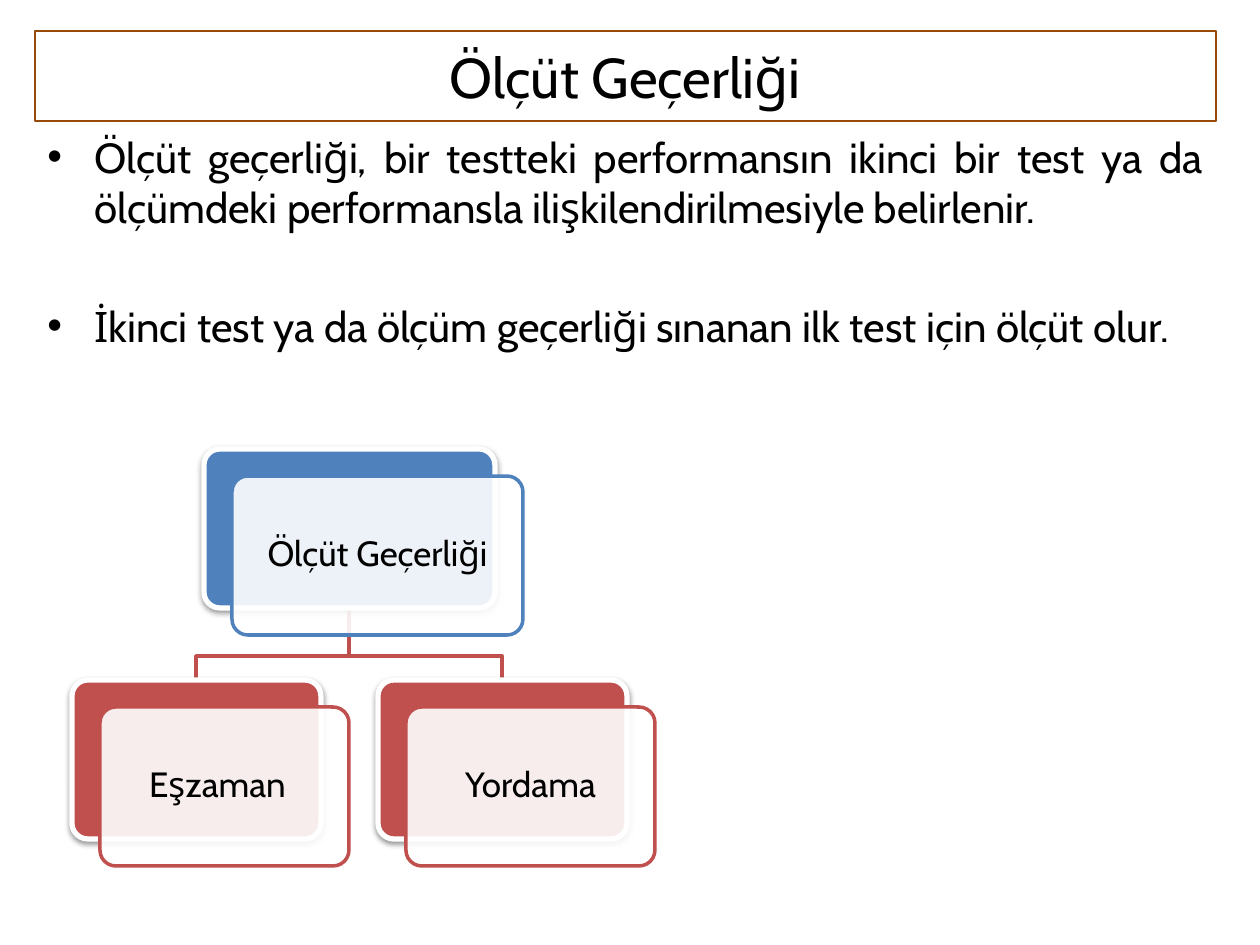
from dataclasses import dataclass
from lxml.etree import SubElement
from pptx import Presentation
from pptx.dml.color import RGBColor
from pptx.enum.shapes import MSO_SHAPE
from pptx.enum.text import MSO_ANCHOR, MSO_AUTO_SIZE, PP_ALIGN
from pptx.oxml.ns import qn
from pptx.util import Pt


@dataclass(frozen=True)
class Theme:
    """Colours, font and type sizes of the slide."""
    font: str = "Cabin"
    text: str = "000000"
    paper: str = "FFFFFF"
    frame: str = "984807"
    root: str = "4F81BD"
    child: str = "C0504D"
    title_size: int = 32
    body_size: int = 24
    node_size: int = 20


THEME = Theme()
EMU_PER_PX = 914400 / 126


def px(n):
    """Turn pixels into EMU."""
    return round(n * EMU_PER_PX)


def rgb(color):
    """Turn a hex string into a colour."""
    return RGBColor.from_string(color)


def style_text(p, size, align):
    """Format a paragraph and its runs."""
    p.alignment = align
    for r in p.runs:
        r.font.name = THEME.font
        r.font.size = Pt(size)
        r.font.color.rgb = rgb(THEME.text)


def style_line(shape, color, width):
    """Give a shape a solid outline."""
    shape.line.color.rgb = rgb(color)
    shape.line.width = Pt(width)


def add_title(s, x, y, w, h, text):
    """Place the framed title."""
    sp = s.shapes.title
    sp.left, sp.top, sp.width, sp.height = map(px, (x, y, w, h))
    style_line(sp, THEME.frame, 0.75)
    tf = sp.text_frame
    tf.text = text
    tf.auto_size = MSO_AUTO_SIZE.NONE
    tf.vertical_anchor = MSO_ANCHOR.MIDDLE
    style_text(tf.paragraphs[0], THEME.title_size, PP_ALIGN.CENTER)


def add_bullets(s, x, y, w, h, items):
    """Place justified bullet paragraphs with a wide gap between them."""
    tf = s.shapes.add_textbox(*map(px, (x, y, w, h))).text_frame
    tf.word_wrap = True
    for i, item in enumerate(items):
        p = tf.add_paragraph() if i else tf.paragraphs[0]
        p.text = item
        pPr = p._p.get_or_add_pPr()
        pPr.set("marL", str(px(47)))
        pPr.set("indent", str(-px(47)))
        SubElement(pPr, qn("a:buFont"), typeface="Arial")
        SubElement(pPr, qn("a:buChar"), char="•")
        if i:
            p.space_before = Pt(39)
        style_text(p, THEME.body_size, PP_ALIGN.JUSTIFY)


def add_card(s, x, y, w, h, fill, line, width):
    """Add one rounded rectangle."""
    sp = s.shapes.add_shape(MSO_SHAPE.ROUNDED_RECTANGLE, *map(px, (x, y, w, h)))
    sp.adjustments[0] = 0.1
    sp.shadow.inherit = False
    sp.fill.solid()
    sp.fill.fore_color.rgb = rgb(fill)
    style_line(sp, line, width)
    return sp


def add_node(s, x, y, w, h, text, color, pad_right=15):
    """Add a shadowed card with a translucent label card over it."""
    back = add_card(s, x, y, w, h, color, THEME.paper, 3)
    effects = back._element.spPr.find(qn("a:effectLst"))
    shadow = SubElement(effects, qn("a:outerShdw"), blurRad="40000", dist="20000",
                        dir="5400000", rotWithShape="0")
    tint = SubElement(shadow, qn("a:srgbClr"), val="000000")
    SubElement(tint, qn("a:alpha"), val="38000")

    label = add_card(s, x + 28, y + 27, w, h, THEME.paper, color, 2)
    fill = label._element.spPr.find(qn("a:solidFill"))
    SubElement(fill[0], qn("a:alpha"), val="90000")
    tf = label.text_frame
    tf.text = text
    tf.word_wrap = True
    tf.vertical_anchor = MSO_ANCHOR.MIDDLE
    tf.margin_left = tf.margin_top = tf.margin_bottom = px(15)
    tf.margin_right = px(pad_right)
    tf.paragraphs[0].line_spacing = 0.9
    style_text(tf.paragraphs[0], THEME.node_size, PP_ALIGN.CENTER)


def add_branch(s, start, end):
    """Draw a bent line from a parent down to a child."""
    bend = end[1] - 24
    fb = s.shapes.build_freeform(*start, scale=EMU_PER_PX)
    fb.add_line_segments([(start[0], bend), (end[0], bend), end], close=False)
    sp = fb.convert_to_shape()
    sp.shadow.inherit = False
    sp.fill.background()
    style_line(sp, THEME.child, 2)


def add_tree(s, x, y, w, h, root, children):
    """Place a root node centred over a row of children."""
    root_w, child_w, node_h = 291, 249, 159
    step = (w - child_w) // (len(children) - 1)
    child_y = y + h - node_h
    mid = x + w // 2
    lefts = [x + i * step for i in range(len(children))]
    for left in reversed(lefts):
        add_branch(s, (mid, y + node_h), (left + child_w // 2, child_y))
    add_node(s, mid - root_w // 2, y, root_w, node_h, root, THEME.root)
    for left, (text, pad_right) in zip(lefts, children):
        add_node(s, left, child_y, child_w, node_h, text, THEME.child, pad_right)


def main():
    """Build and save the slide."""
    prs = Presentation()
    prs.slide_width, prs.slide_height = px(1260), px(945)
    s = prs.slides.add_slide(prs.slide_layouts[5])
    add_title(s, 35, 31, 1181, 90, "Ölçüt Geçerliği")
    add_bullets(s, 35, 125, 1181, 318, [
        "Ölçüt geçerliği, bir testteki performansın ikinci bir test ya da "
        "ölçümdeki performansla ilişkilendirilmesiyle belirlenir.",
        "İkinci test ya da ölçüm geçerliği sınanan ilk test için ölçüt olur.",
    ])
    add_tree(s, 72, 449, 555, 390, "Ölçüt Geçerliği",
             [("Eşzaman", 29), ("Yordama", 15)])
    prs.save("out.pptx")


if __name__ == "__main__":
    main()
